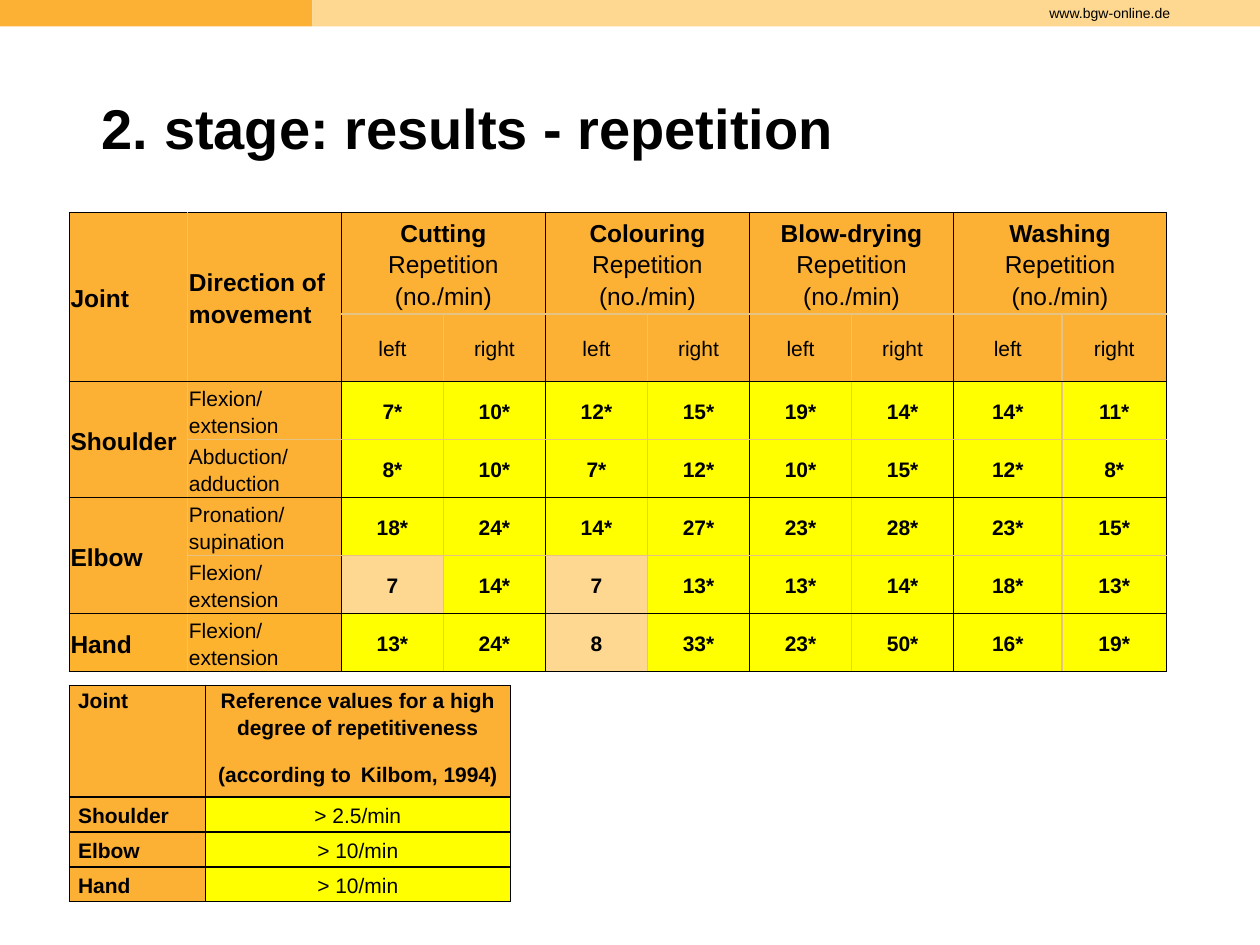
from dataclasses import dataclass, field, replace
from lxml.etree import SubElement as Sub
from pptx import Presentation
from pptx.dml.color import RGBColor as Rgb
from pptx.enum.shapes import MSO_SHAPE as Shape
from pptx.enum.text import MSO_ANCHOR as Anchor, PP_ALIGN as Align
from pptx.oxml.ns import qn
from pptx.util import Inches, Pt


@dataclass(frozen=True)
class Theme:
    font: str = "Arial"
    ink: str = "000000"
    white: str = "FFFFFF"
    amber: str = "FCB135"
    gold: str = "FDB32D"
    pale: str = "FED790"
    yellow: str = "FFFF00"
    tan: str = "E6C382"
    tiny: int = 8
    body: int = 12
    head: int = 14
    gap: int = 20
    title: int = 32


THEME = Theme()


@dataclass(frozen=True)
class Part:
    text: str
    size: int = THEME.body
    bold: bool = False
    color: str = THEME.ink


@dataclass(frozen=True)
class Style:
    align: Align = Align.LEFT
    anchor: Anchor = Anchor.MIDDLE
    side: float = 0.01
    lead: float = 1.15
    after: int = 0


@dataclass(frozen=True)
class Box:
    left: float
    top: float
    width: float
    height: float


@dataclass(frozen=True)
class Grid:
    left: float
    top: float
    cols: list[float]
    rows: list[float]
    dark_cols: set[int]
    dark_rows: set[int]


@dataclass(frozen=True)
class Item:
    row: int
    col: int
    lines: list[list[Part]]
    style: Style
    fill: str = THEME.amber
    down: int = 1
    across: int = 1


@dataclass(frozen=True)
class Motion:
    lines: tuple[str, str]
    counts: str


@dataclass(frozen=True)
class Joint:
    name: str
    limit: str
    motions: list[Motion] = field(default_factory=list)
    fill: str = THEME.amber


JOINTS = [
    Joint("Shoulder", "> 2.5/min", [
        Motion(("Flexion/", "extension"), "7* 10* 12* 15* 19* 14* 14* 11*"),
        Motion(("Abduction/", "adduction"), "8* 10* 7* 12* 10* 15* 12* 8*")]),
    Joint("Elbow", "> 10/min", [
        Motion(("Pronation/", "supination"), "18* 24* 14* 27* 23* 28* 23* 15*"),
        Motion(("Flexion/", "extension"), "7 14* 7 13* 13* 14* 18* 13*")]),
    Joint("Hand", "> 10/min", [
        Motion(("Flexion/", "extension"), "13* 24* 8 33* 23* 50* 16* 19*")], THEME.gold),
]
TASKS = ["Cutting", "Colouring", "Blow-drying", "Washing"]

deck = Presentation()
deck.slide_width, deck.slide_height = Inches(10), Inches(7.5)
slide = deck.slides.add_slide(deck.slide_layouts[6])


def wide(share: float) -> int:
    return int(deck.slide_width * share / 100)


def high(share: float) -> int:
    return int(deck.slide_height * share / 100)


def place(box: Box) -> tuple[int, int, int, int]:
    return wide(box.left), high(box.top), wide(box.width), high(box.height)


def write(frame, lines: list[list[Part]], style: Style) -> None:
    for index, parts in enumerate(lines):
        para = frame.add_paragraph() if index else frame.paragraphs[0]
        para.alignment, para.line_spacing = style.align, style.lead
        para.space_after = Pt(style.after)
        for part in parts:
            run = para.add_run()
            run.text = part.text
            run.font.name, run.font.size = THEME.font, Pt(part.size)
            run.font.bold = part.bold
            run.font.color.rgb = Rgb.from_string(part.color)


def add_bar(box: Box, fill: str):
    bar = slide.shapes.add_shape(Shape.RECTANGLE, *place(box))
    bar.shadow.inherit = False
    bar.fill.solid()
    bar.fill.fore_color.rgb = Rgb.from_string(fill)
    bar.line.fill.background()
    return bar


def add_edge(cell, side: str, dark: bool) -> None:
    line = Sub(cell._tc.get_or_add_tcPr(), qn(f"a:ln{side}"), w=str(Pt(1)))
    paint = Sub(line, qn("a:solidFill"))
    Sub(paint, qn("a:srgbClr"), val=THEME.ink if dark else THEME.tan)


def fill_cell(table, grid: Grid, item: Item) -> None:
    cell = table.cell(item.row, item.col)
    end_row, end_col = item.row + item.down, item.col + item.across
    if item.down * item.across > 1:
        cell.merge(table.cell(end_row - 1, end_col - 1))
    cell.vertical_anchor = item.style.anchor
    cell.margin_left = cell.margin_right = Inches(item.style.side)
    cell.margin_top = cell.margin_bottom = 0
    add_edge(cell, "L", item.col in grid.dark_cols)
    add_edge(cell, "R", end_col in grid.dark_cols)
    add_edge(cell, "T", item.row in grid.dark_rows)
    add_edge(cell, "B", end_row in grid.dark_rows)
    cell.fill.solid()
    cell.fill.fore_color.rgb = Rgb.from_string(item.fill)
    write(cell.text_frame, item.lines, item.style)


def add_grid(grid: Grid, items: list[Item]) -> None:
    box = Box(grid.left, grid.top, sum(grid.cols), sum(grid.rows))
    table = slide.shapes.add_table(len(grid.rows), len(grid.cols), *place(box)).table
    table.first_row = table.horz_banding = False
    for col, share in zip(table.columns, grid.cols):
        col.width = wide(share)
    for row, share in zip(table.rows, grid.rows):
        row.height = high(share)
    for item in items:
        fill_cell(table, grid, item)


def list_counts() -> list[Item]:
    left, mid = Style(), Style(Align.CENTER)
    value = replace(mid, side=0.05, after=10)
    items = [Item(0, col, [[Part(name, THEME.head, True)]], left, down=2)
             for col, name in enumerate(["Joint", "Direction of movement"])]
    for index, task in enumerate(TASKS):
        col = 2 + 2 * index
        lines = [[Part(task, THEME.head, True)], [Part("Repetition (no./min)", THEME.head)]]
        items.append(Item(0, col, lines, mid, across=2))
        items += [Item(1, col + step, [[Part(hand)]], mid)
                  for step, hand in enumerate(["left", "right"])]
    row = 2
    for joint in JOINTS:
        name = [[Part(joint.name, THEME.head, True)]]
        items.append(Item(row, 0, name, left, joint.fill, down=len(joint.motions)))
        for motion in joint.motions:
            items.append(Item(row, 1, [[Part(text)] for text in motion.lines], left, joint.fill))
            for col, count in enumerate(motion.counts.split(), 2):
                fill = THEME.yellow if count.endswith("*") else THEME.pale
                items.append(Item(row, col, [[Part(count, bold=True)]], value, fill))
            row += 1
    return items


def list_limits() -> list[Item]:
    left = Style(side=0.07, after=3)
    mid = replace(left, align=Align.CENTER)
    note = [[Part("Reference values for a high degree of repetitiveness", bold=True)],
            [Part("(according to", bold=True), Part(" ", THEME.gap, True, THEME.white),
             Part("Kilbom, 1994)", bold=True)]]
    items = [Item(0, 0, [[Part("Joint", bold=True)]], replace(left, anchor=Anchor.TOP)),
             Item(0, 1, note, replace(mid, anchor=Anchor.TOP))]
    for row, joint in enumerate(JOINTS, 1):
        items += [Item(row, 0, [[Part(joint.name, bold=True)]], left),
                  Item(row, 1, [[Part(joint.limit)]], mid, THEME.yellow)]
    return items


add_bar(Box(0, 0, 24.8, 2.8), THEME.amber)
strip = add_bar(Box(24.8, 0, 75.2, 2.8), THEME.pale).text_frame
strip.word_wrap, strip.vertical_anchor = False, Anchor.MIDDLE
strip.margin_right = wide(7.1)
write(strip, [[Part("www.bgw-online.de", THEME.tiny)]], Style(Align.RIGHT, lead=1.0))

title = slide.shapes.add_textbox(*place(Box(7.1, 8, 85.8, 10.27))).text_frame
title.word_wrap, title.vertical_anchor = True, Anchor.MIDDLE
write(title, [[Part("2. stage: results - repetition", THEME.title, True)]], Style(lead=1.1))

add_grid(Grid(5.5, 22.5, [9.4, 12.2] + [8.1] * 6 + [8.6, 8.3], [10.05, 6.75] + [5.73] * 5,
              {0, 2, 4, 6, 8, 10}, {0, 2, 4, 6, 7}), list_counts())
add_grid(Grid(5.5, 72.53, [10.8, 24.2], [11] + [3.7] * 3,
              {0, 1, 2}, set(range(5))), list_limits())
deck.save("out.pptx")
